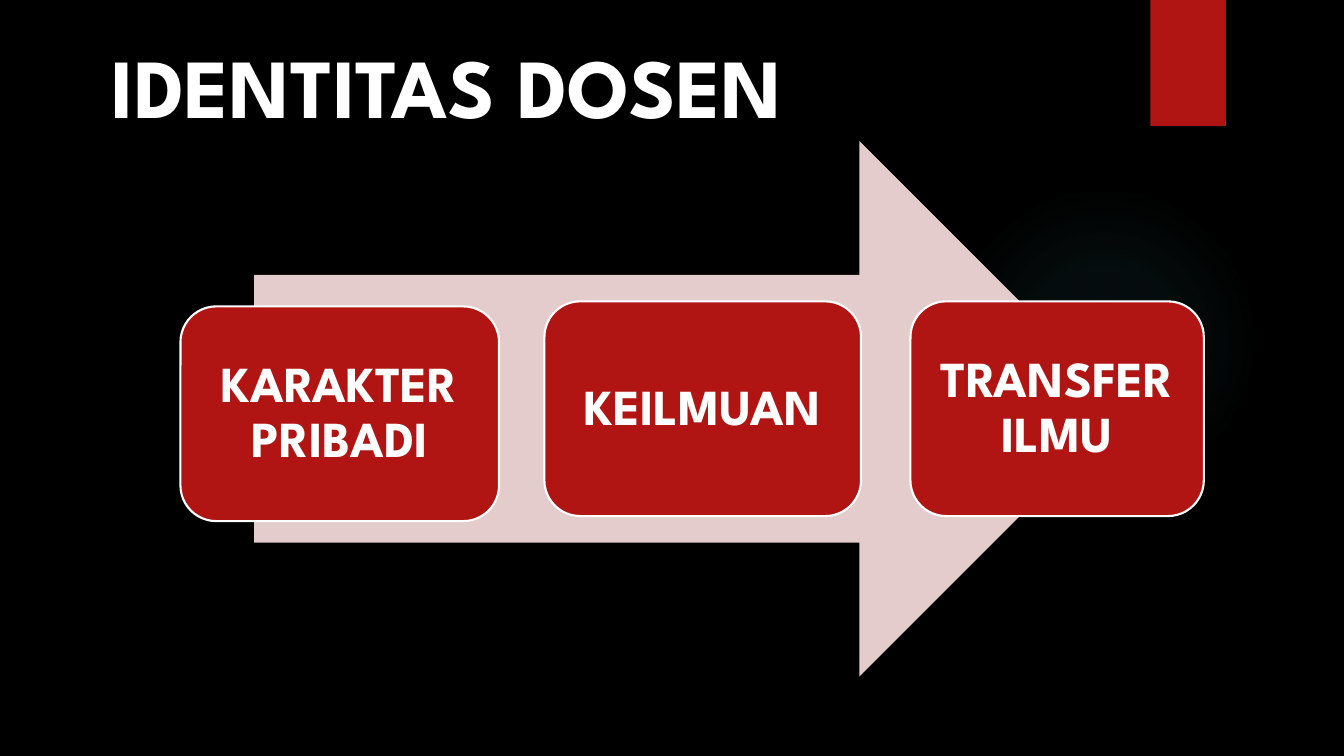
from lxml import etree
from pptx import Presentation
from pptx.dml.color import RGBColor
from pptx.enum.shapes import MSO_SHAPE
from pptx.enum.text import MSO_ANCHOR, MSO_AUTO_SIZE, PP_ALIGN
from pptx.oxml import parse_xml
from pptx.oxml.ns import nsdecls, qn
from pptx.util import Inches, Pt

COLORS = {"black": "000000", "white": "FFFFFF", "red": "B01513",
          "pink": "E4CCCC", "teal": "50B9C1"}
FONT = "League Spartan"
GLOW_STOPS = [(0, 7), (36, 6), (69, 0)]  # position and opacity in percent

# Steps: label and box (left, top, width, height)
STEPS = [("KARAKTER PRIBADI", (1.79, 3.04, 3.16, 2.13)),
         ("KEILMUAN", (5.4, 2.99, 3.14, 2.13)),
         ("TRANSFER ILMU", (9.03, 2.99, 2.91, 2.13))]


def rgb(name):
    return RGBColor.from_string(COLORS[name])


def write_text(frame, text, size, align=PP_ALIGN.LEFT, anchor=MSO_ANCHOR.TOP,
               spacing=1.0, wrap=True, autosize=MSO_AUTO_SIZE.NONE):
    frame.text = text
    frame.word_wrap = wrap
    frame.auto_size = autosize
    frame.vertical_anchor = anchor
    paragraph = frame.paragraphs[0]
    paragraph.alignment = align
    paragraph.line_spacing = spacing
    font = paragraph.runs[0].font
    font.name, font.size, font.bold = FONT, Pt(size), True
    font.color.rgb = rgb("white")


def add_block(slide, preset, box, fill, line=None):
    block = slide.shapes.add_shape(preset, *map(Inches, box))
    block.shadow.inherit = False
    block.fill.solid()
    block.fill.fore_color.rgb = rgb(fill)
    if line:
        block.line.color.rgb = rgb(line)
        block.line.width = Pt(1.5)
    else:
        block.line.fill.background()
    return block


def add_glow(slide, box):
    glow = add_block(slide, MSO_SHAPE.OVAL, box, "teal")
    stops = "".join(
        f'<a:gs pos="{position * 1000}"><a:srgbClr val="{COLORS["teal"]}">'
        f'<a:alpha val="{opacity * 1000}"/></a:srgbClr></a:gs>'
        for position, opacity in GLOW_STOPS)
    gradient = parse_xml(
        f'<a:gradFill {nsdecls("a")}><a:gsLst>{stops}</a:gsLst><a:path path="circle">'
        '<a:fillToRect l="50000" t="50000" r="50000" b="50000"/></a:path></a:gradFill>')
    properties = glow.element.spPr
    properties.replace(properties.find(qn("a:solidFill")), gradient)


def add_ribbon(slide, box):
    ribbon = add_block(slide, MSO_SHAPE.RECTANGLE, box, "red")
    effects = ribbon.element.spPr.find(qn("a:effectLst"))
    shadow = etree.SubElement(effects, qn("a:outerShdw"), blurRad=str(Pt(3)),
                              dist=str(Pt(2)), dir="5400000", rotWithShape="0")
    color = etree.SubElement(shadow, qn("a:srgbClr"), val=COLORS["black"])
    etree.SubElement(color, qn("a:alpha"), val="45000")


def add_title(slide, box):
    title = slide.shapes.title
    title.left, title.top, title.width, title.height = map(Inches, box)
    write_text(title.text_frame, "IDENTITAS DOSEN", 60, wrap=False,
               autosize=MSO_AUTO_SIZE.SHAPE_TO_FIT_TEXT)


def add_process(slide, arrow_box):
    add_block(slide, MSO_SHAPE.RIGHT_ARROW, arrow_box, "pink")
    for label, box in STEPS:
        step = add_block(slide, MSO_SHAPE.ROUNDED_RECTANGLE, box, "red", "white")
        frame = step.text_frame
        # The rounded corners already inset the text by about 0.1 inch
        frame.margin_left = frame.margin_right = Inches(0.15)
        frame.margin_top = frame.margin_bottom = Inches(0.15)
        write_text(frame, label, 36, PP_ALIGN.CENTER, MSO_ANCHOR.MIDDLE, 0.9)


def main():
    deck = Presentation()
    deck.slide_width, deck.slide_height = Inches(13.33), Inches(7.5)
    slide = deck.slides.add_slide(deck.slide_layouts[5])
    slide.background.fill.solid()
    slide.background.fill.fore_color.rgb = rgb("black")

    # Backdrop
    add_glow(slide, (9.41, 1.83, 3.08, 3.08))
    add_ribbon(slide, (11.41, 0, 0.75, 1.25))
    # Content
    add_title(slide, (1.01, 0.29, 7.12, 1.11))
    add_process(slide, (2.52, 1.4, 8.66, 5.31))
    deck.save("out.pptx")


if __name__ == "__main__":
    main()
